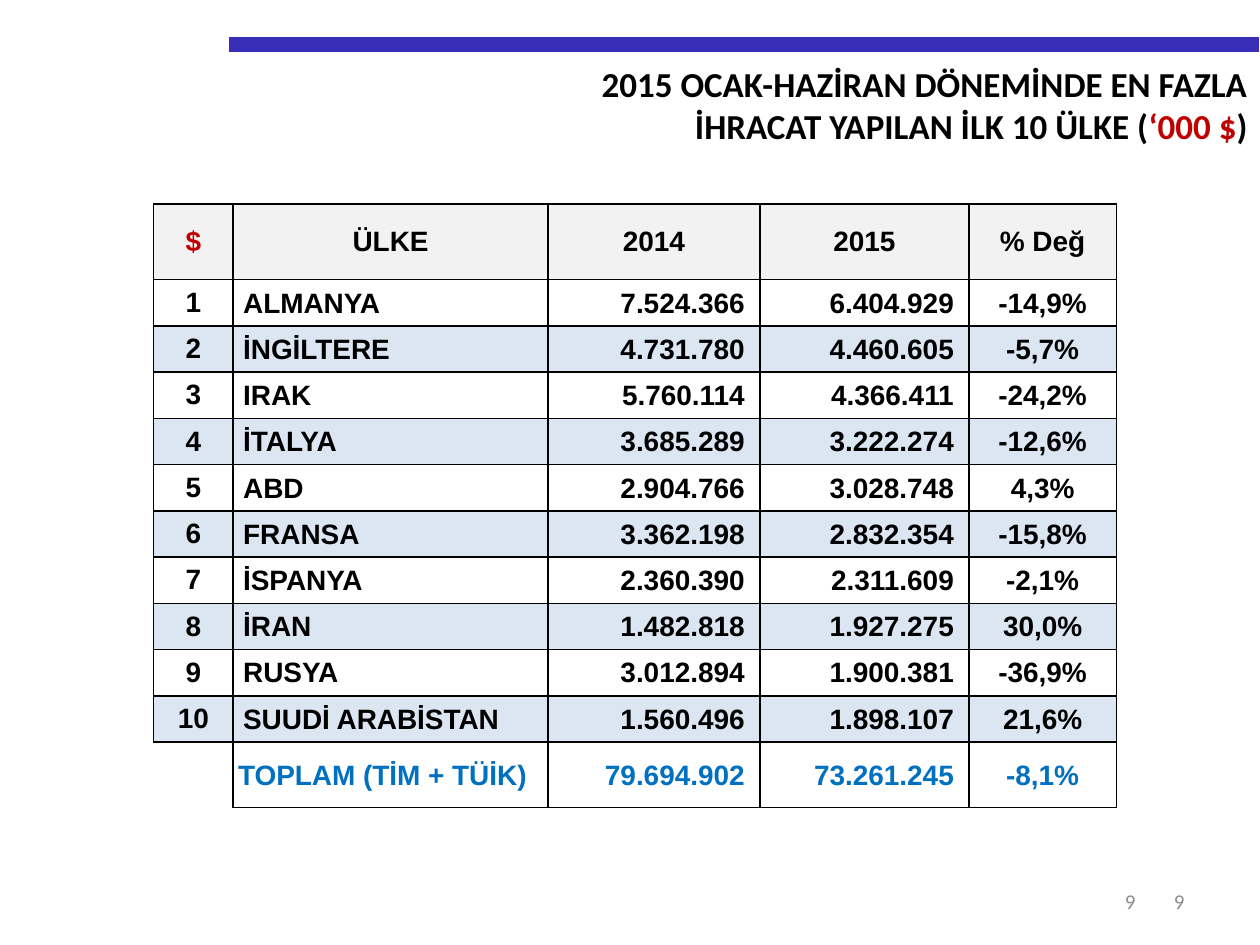
import pptx
import pptx.dml.color
import pptx.enum.shapes
import pptx.enum.text
import pptx.oxml.ns
import pptx.util
from lxml import etree

Inches = pptx.util.Inches
Pt = pptx.util.Pt
ALIGN = pptx.enum.text.PP_ALIGN
MIDDLE = pptx.enum.text.MSO_ANCHOR.MIDDLE

COLORS = {
    "bar": "382EB8",
    "text": "000000",
    "accent": "C00000",
    "total": "0070C0",
    "header": "F2F2F2",
    "band": "DCE6F2",
    "number": "8C8C8C",
}
TITLE = [
    [("2015 OCAK-HAZİRAN DÖNEMİNDE EN FAZLA", "text")],
    [("İHRACAT YAPILAN İLK 10 ÜLKE (", "text"), ("‘000 $", "accent"), (")", "text")],
]
HEADINGS = ["$", "ÜLKE", "2014", "2015", "% Değ"]
COUNTRIES = [
    ("ALMANYA", "7.524.366", "6.404.929", "-14,9%"),
    ("İNGİLTERE", "4.731.780", "4.460.605", "-5,7%"),
    ("IRAK", "5.760.114", "4.366.411", "-24,2%"),
    ("İTALYA", "3.685.289", "3.222.274", "-12,6%"),
    ("ABD", "2.904.766", "3.028.748", "4,3%"),
    ("FRANSA", "3.362.198", "2.832.354", "-15,8%"),
    ("İSPANYA", "2.360.390", "2.311.609", "-2,1%"),
    ("İRAN", "1.482.818", "1.927.275", "30,0%"),
    ("RUSYA", "3.012.894", "1.900.381", "-36,9%"),
    ("SUUDİ ARABİSTAN", "1.560.496", "1.898.107", "21,6%"),
]
TOTAL = ["", "TOPLAM (TİM + TÜİK)", "79.694.902", "73.261.245", "-8,1%"]
COLUMN_WIDTHS = [0.63, 2.5, 1.68, 1.66, 1.17]
HEADER_HEIGHT, TOTAL_HEIGHT = 0.6, 0.52
COLUMN_ALIGNS = [ALIGN.CENTER, ALIGN.LEFT, ALIGN.RIGHT, ALIGN.RIGHT, ALIGN.CENTER]
WIDE_INSETS = (0.1, 0.05, 0.1, 0.05)
COLUMN_INSETS = [
    WIDE_INSETS,
    (0.08, 0.01, 0.01, 0),
    (0.01, 0.01, 0.12, 0),
    (0.01, 0.01, 0.12, 0),
    (0.01, 0.01, 0.01, 0),
]


def color(name):
    """Return the named colour."""
    return pptx.dml.color.RGBColor.from_string(COLORS[name])


def add_span(para, text, size, tint, family, bold=False):
    """Append one formatted run to a paragraph."""
    span = para.add_run()
    span.text = text
    span.font.size = Pt(size)
    span.font.name = family
    span.font.bold = bold
    span.font.color.rgb = color(tint)


def add_bar(page, left, top, width):
    """Draw the thick line along the top."""
    bar = page.shapes.add_connector(
        pptx.enum.shapes.MSO_CONNECTOR.STRAIGHT,
        Inches(left), Inches(top), Inches(left + width), Inches(top),
    )
    bar.line.color.rgb = color("bar")
    bar.line.width = Pt(8.5)
    etree.SubElement(bar._element.spPr, pptx.oxml.ns.qn("a:effectLst"))


def add_title(page, left, top, width, height):
    """Write the right-aligned two-line title."""
    box = page.shapes.add_textbox(Inches(left), Inches(top), Inches(width), Inches(height))
    frame = box.text_frame
    frame.word_wrap = True
    for index, line in enumerate(TITLE):
        para = frame.add_paragraph() if index else frame.paragraphs[0]
        para.alignment = ALIGN.RIGHT
        for text, tint in line:
            add_span(para, text, 20, tint, "Calibri", True)


def add_page_number(page, left, top, width, height):
    """Write a grey page number at the right of its box."""
    box = page.shapes.add_textbox(Inches(left), Inches(top), Inches(width), Inches(height))
    box.text_frame.word_wrap = True
    box.text_frame.vertical_anchor = MIDDLE
    para = box.text_frame.paragraphs[0]
    para.alignment = ALIGN.RIGHT
    add_span(para, "9", 12, "number", "Calibri")


def set_borders(cell, shown):
    """Rule the sides listed in shown and clear the others."""
    properties = cell._tc.get_or_add_tcPr()
    for side in "LRTB":
        line = etree.SubElement(properties, pptx.oxml.ns.qn(f"a:ln{side}"), w=str(Pt(1)))
        if side in shown:
            fill = etree.SubElement(line, pptx.oxml.ns.qn("a:solidFill"))
            etree.SubElement(fill, pptx.oxml.ns.qn("a:srgbClr"), val=COLORS["text"])
        else:
            etree.SubElement(line, pptx.oxml.ns.qn("a:noFill"))


def fill_cell(cell, text, tint, fill, align, insets):
    """Write, rule and shade one table cell."""
    set_borders(cell, "LRTB" if text else "RT")
    if fill:
        cell.fill.solid()
        cell.fill.fore_color.rgb = color(fill)
    else:
        cell.fill.background()
    cell.vertical_anchor = MIDDLE
    cell.margin_left, cell.margin_top, cell.margin_right, cell.margin_bottom = map(Inches, insets)
    para = cell.text_frame.paragraphs[0]
    para.alignment = align
    if text:
        add_span(para, text, 16, tint, "Arial", True)


def add_country_table(page, left, top, width, height):
    """Build the ranking table with its header and total rows."""
    ranked = [[str(rank), *country] for rank, country in enumerate(COUNTRIES, 1)]
    rows = [HEADINGS, *ranked, TOTAL]
    last = len(rows) - 1
    table = page.shapes.add_table(
        len(rows), len(HEADINGS), Inches(left), Inches(top), Inches(width), Inches(height)
    ).table
    table.first_row = table.horz_banding = False
    for column, column_width in zip(table.columns, COLUMN_WIDTHS):
        column.width = Inches(column_width)
    body_height = (height - HEADER_HEIGHT - TOTAL_HEIGHT) / len(COUNTRIES)
    heights = [HEADER_HEIGHT, *[body_height] * len(COUNTRIES), TOTAL_HEIGHT]
    for r, values in enumerate(rows):
        table.rows[r].height = Inches(heights[r])
        for c, text in enumerate(values):
            tint, fill = "text", None
            align, insets = COLUMN_ALIGNS[c], COLUMN_INSETS[c]
            if r == 0:
                tint, fill = "text" if c else "accent", "header"
                align, insets = ALIGN.CENTER, WIDE_INSETS
            elif r == last:
                tint = "total"
                insets = (0.04, 0.01, 0.01, 0) if c == 1 else insets
            elif r % 2 == 0:
                fill = "band"
            fill_cell(table.cell(r, c), text, tint, fill, align, insets)


def main():
    """Build and save the slide."""
    deck = pptx.Presentation()
    deck.slide_width, deck.slide_height = Inches(10), Inches(7.5)
    page = deck.slides.add_slide(deck.slide_layouts[6])
    add_page_number(page, 7.17, 6.95, 2.33, 0.4)
    add_bar(page, 1.82, 0.35, 8.17)
    add_page_number(page, 7.01, 6.95, 2.1, 0.4)
    add_title(page, 1.06, 0.45, 8.94, 0.77)
    add_country_table(page, 1.22, 1.62, 7.64, 4.79)
    deck.save("out.pptx")


if __name__ == "__main__":
    main()
